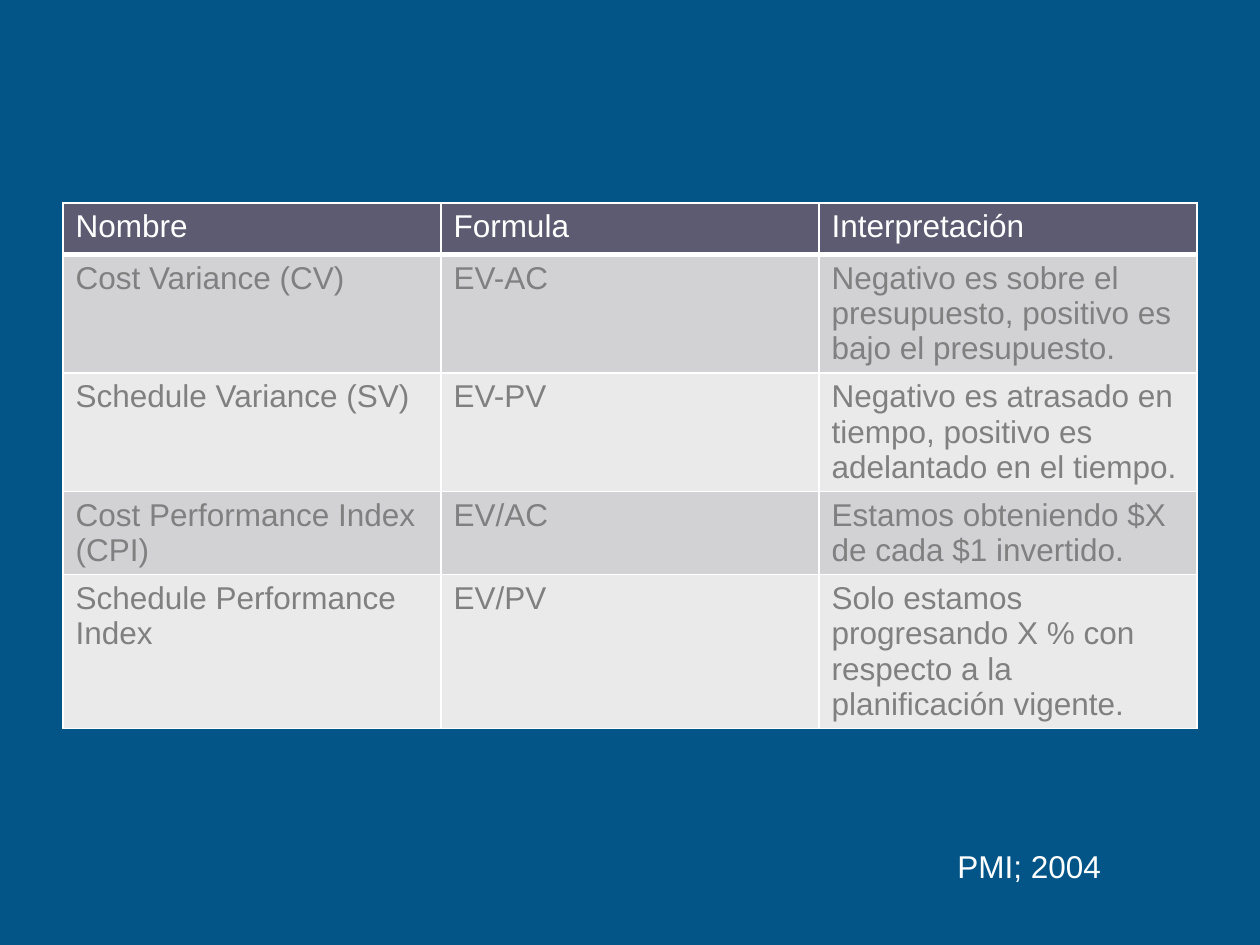
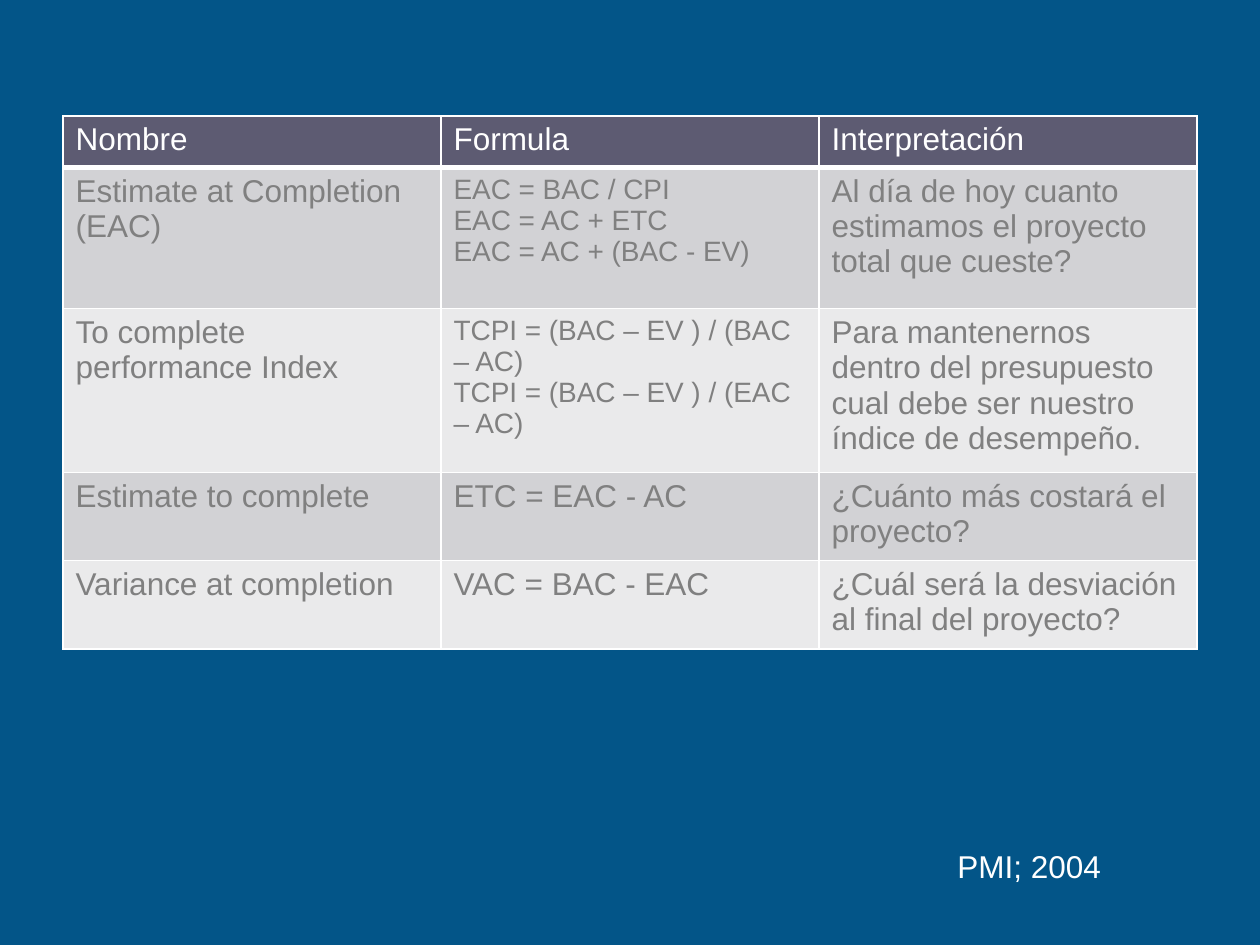
from lxml.etree import SubElement
from pptx import Presentation
from pptx.dml.color import RGBColor
from pptx.oxml.ns import qn
from pptx.util import Inches, Pt

BACKGROUND = RGBColor(0x03, 0x55, 0x88)
HEADER_FILL = RGBColor(0x5D, 0x5B, 0x72)
BAND_FILLS = [RGBColor(0xEA, 0xEA, 0xEB), RGBColor(0xD2, 0xD2, 0xD5)]
WHITE = RGBColor(0xFF, 0xFF, 0xFF)
BODY_TEXT = RGBColor(0x80, 0x80, 0x80)
FONT = "Arial"

HEADINGS = ("Nombre", "Formula", "Interpretación")
VARIANCES_AND_INDEXES = [
    ("Cost Variance (CV)", "EV-AC",
     "Negativo es sobre el presupuesto, positivo es bajo el presupuesto."),
    ("Schedule Variance (SV)", "EV-PV",
     "Negativo es atrasado en tiempo, positivo es adelantado en el tiempo."),
    ("Cost Performance Index (CPI)", "EV/AC",
     "Estamos obteniendo $X de cada $1 invertido."),
    ("Schedule Performance Index", "EV/PV",
     "Solo estamos progresando X % con respecto a la planificación vigente."),
]
FORECASTS = [
    ("Estimate at Completion (EAC)",
     "EAC = BAC / CPI\nEAC = AC + ETC\nEAC = AC + (BAC - EV)",
     "Al día de hoy cuanto estimamos el proyecto total que cueste?"),
    ("To complete performance Index",
     "TCPI = (BAC – EV ) / (BAC – AC)\nTCPI = (BAC – EV ) / (EAC – AC)",
     "Para mantenernos dentro del presupuesto cual debe ser nuestro índice de desempeño."),
    ("Estimate to complete", "ETC = EAC - AC", "¿Cuánto más costará el proyecto?"),
    ("Variance at completion", "VAC = BAC - EAC",
     "¿Cuál será la desviación al final del proyecto?"),
]
# Table top, row heights and body rows of each slide
SLIDES = [
    (1.61, [0.41, 0.94, 0.94, 0.66, 1.22], VARIANCES_AND_INDEXES),
    (0.92, [0.41, 1.12, 1.22, 0.66, 0.66], FORECASTS),
]


def style_text(text_frame, color, size=18):
    for paragraph in text_frame.paragraphs:
        paragraph.font.name = FONT
        paragraph.font.size = Pt(size)
        paragraph.font.bold = False
        paragraph.font.color.rgb = color


def add_borders(cell, bottom_width):
    """Draw white 1 pt cell borders, with a bottom border of its own width."""
    widths = {"a:lnL": 1, "a:lnR": 1, "a:lnT": 1, "a:lnB": bottom_width}
    properties = cell._tc.get_or_add_tcPr()
    for side, width in widths.items():
        line = SubElement(properties, qn(side), w=str(Pt(width)))
        fill = SubElement(line, qn("a:solidFill"))
        SubElement(fill, qn("a:srgbClr"), val=str(WHITE))


prs = Presentation()
prs.slide_width, prs.slide_height = Inches(10), Inches(7.5)
blank_layout = prs.slide_layouts[6]

for top, row_heights, measures in SLIDES:
    slide = prs.slides.add_slide(blank_layout)
    slide.background.fill.solid()
    slide.background.fill.fore_color.rgb = BACKGROUND

    rows = [HEADINGS] + measures
    table = slide.shapes.add_table(
        len(rows), len(HEADINGS), Inches(0.5), Inches(top),
        Inches(9), Inches(sum(row_heights))).table
    for row_number, (height, texts) in enumerate(zip(row_heights, rows)):
        is_header = row_number == 0
        table.rows[row_number].height = Inches(height)
        for column, text in enumerate(texts):
            cell = table.cell(row_number, column)
            add_borders(cell, 3 if is_header else 1)
            cell.fill.solid()
            cell.fill.fore_color.rgb = HEADER_FILL if is_header else BAND_FILLS[row_number % 2]
            cell.text = text
            style_text(cell.text_frame, WHITE if is_header else BODY_TEXT,
                       16 if "\n" in text else 18)

    citation = slide.shapes.add_textbox(
        Inches(7.5), Inches(6.67), Inches(1.92), Inches(0.4)).text_frame
    citation.word_wrap = True
    citation.text = "PMI; 2004"
    style_text(citation, WHITE)

prs.save("out.pptx")
